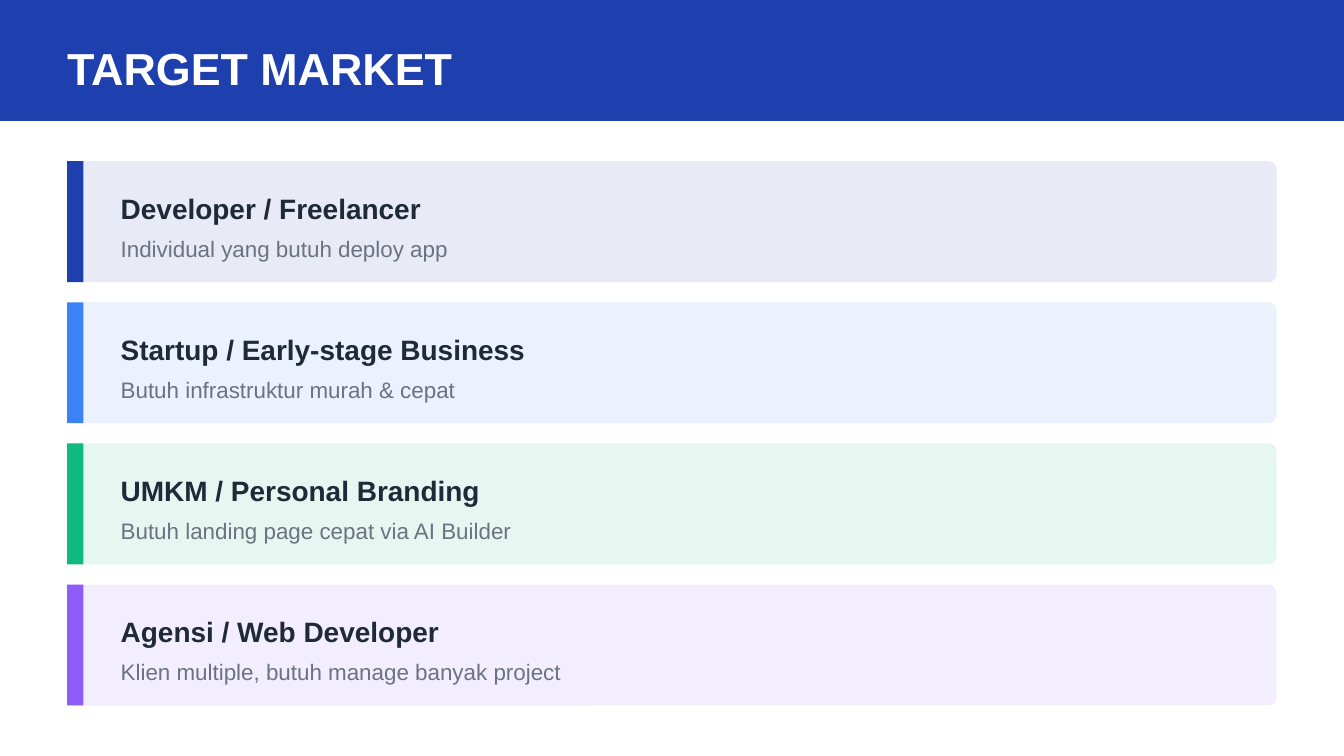
from dataclasses import dataclass

from lxml import etree
from pptx import Presentation
from pptx import util as u
from pptx.dml.color import RGBColor
from pptx.enum import shapes, text
from pptx.oxml import ns

NAVY = RGBColor(0x1E, 0x40, 0xAF)
BLUE = RGBColor(0x3B, 0x82, 0xF6)
GREEN = RGBColor(0x10, 0xB9, 0x81)
VIOLET = RGBColor(0x8B, 0x5C, 0xF6)
INK = RGBColor(0x1F, 0x29, 0x37)
GRAY = RGBColor(0x6B, 0x72, 0x80)
WHITE = RGBColor(0xFF, 0xFF, 0xFF)

FONT = "Arial"
SLIDE_W, SLIDE_H = 720, 405
MARGIN = 36
CARD_W, CARD_H = SLIDE_W - 2 * MARGIN, 64.8
CARD_TOP, CARD_GAP = 86.4, 10.8
ACCENT_W = 8.64
LABEL_X, LABEL_W = 57.6, 576


@dataclass(frozen=True)
class Segment:
    name: str
    need: str
    color: RGBColor


SEGMENTS = [
    Segment("Developer / Freelancer", "Individual yang butuh deploy app", NAVY),
    Segment("Startup / Early-stage Business", "Butuh infrastruktur murah & cepat", BLUE),
    Segment("UMKM / Personal Branding", "Butuh landing page cepat via AI Builder", GREEN),
    Segment("Agensi / Web Developer", "Klien multiple, butuh manage banyak project", VIOLET),
]


def add_box(s, kind, x: float, y: float, w: float, h: float, color: RGBColor):
    sp = s.shapes.add_shape(kind, u.Pt(x), u.Pt(y), u.Pt(w), u.Pt(h))
    sp.shadow.inherit = False
    sp.fill.solid()
    sp.fill.fore_color.rgb = color
    sp.line.fill.background()
    return sp


def set_opacity(sp, percent: int) -> None:
    clr = sp.element.find(".//" + ns.qn("a:srgbClr"))
    etree.SubElement(clr, ns.qn("a:alpha"), val=str(percent * 1000))


def write_text(tf, content: str, *, size: float, color: RGBColor, bold: bool = False) -> None:
    tf.word_wrap = True
    tf.auto_size = text.MSO_AUTO_SIZE.NONE
    tf.vertical_anchor = text.MSO_ANCHOR.MIDDLE
    p = tf.paragraphs[0]
    p.alignment = text.PP_ALIGN.LEFT
    r = p.add_run()
    r.text = content
    r.font.name = FONT
    r.font.size = u.Pt(size)
    r.font.bold = bold
    r.font.color.rgb = color


def add_label(s, y: float, h: float, content: str, **fmt) -> None:
    sp = s.shapes.add_textbox(u.Pt(LABEL_X), u.Pt(y), u.Pt(LABEL_W), u.Pt(h))
    write_text(sp.text_frame, content, **fmt)


def add_header(s, title: str) -> None:
    banner = add_box(s, shapes.MSO_SHAPE.RECTANGLE, 0, 0, SLIDE_W, 64.8, NAVY)
    sp = s.shapes.title
    sp.element.addprevious(banner.element)
    sp.left, sp.top = u.Pt(MARGIN), u.Pt(14.4)
    sp.width, sp.height = u.Pt(CARD_W), u.Pt(43.2)
    tf = sp.text_frame
    tf.margin_left = tf.margin_right = tf.margin_top = tf.margin_bottom = 0
    write_text(tf, title, size=24, color=WHITE, bold=True)


def add_card(s, y: float, segment: Segment) -> None:
    card = add_box(s, shapes.MSO_SHAPE.ROUNDED_RECTANGLE, MARGIN, y, CARD_W, CARD_H, segment.color)
    card.adjustments[0] = 0.067
    set_opacity(card, 10)
    add_box(s, shapes.MSO_SHAPE.RECTANGLE, MARGIN, y, ACCENT_W, CARD_H, segment.color)
    add_label(s, y + 10.8, 28.8, segment.name, size=15, color=INK, bold=True)
    add_label(s, y + 36, 21.6, segment.need, size=12, color=GRAY)


def main() -> None:
    prs = Presentation()
    prs.slide_width, prs.slide_height = u.Pt(SLIDE_W), u.Pt(SLIDE_H)
    s = prs.slides.add_slide(prs.slide_layouts.get_by_name("Title Only"))
    add_header(s, "TARGET MARKET")
    for i, segment in enumerate(SEGMENTS):
        add_card(s, CARD_TOP + i * (CARD_H + CARD_GAP), segment)
    prs.save("out.pptx")


if __name__ == "__main__":
    main()
